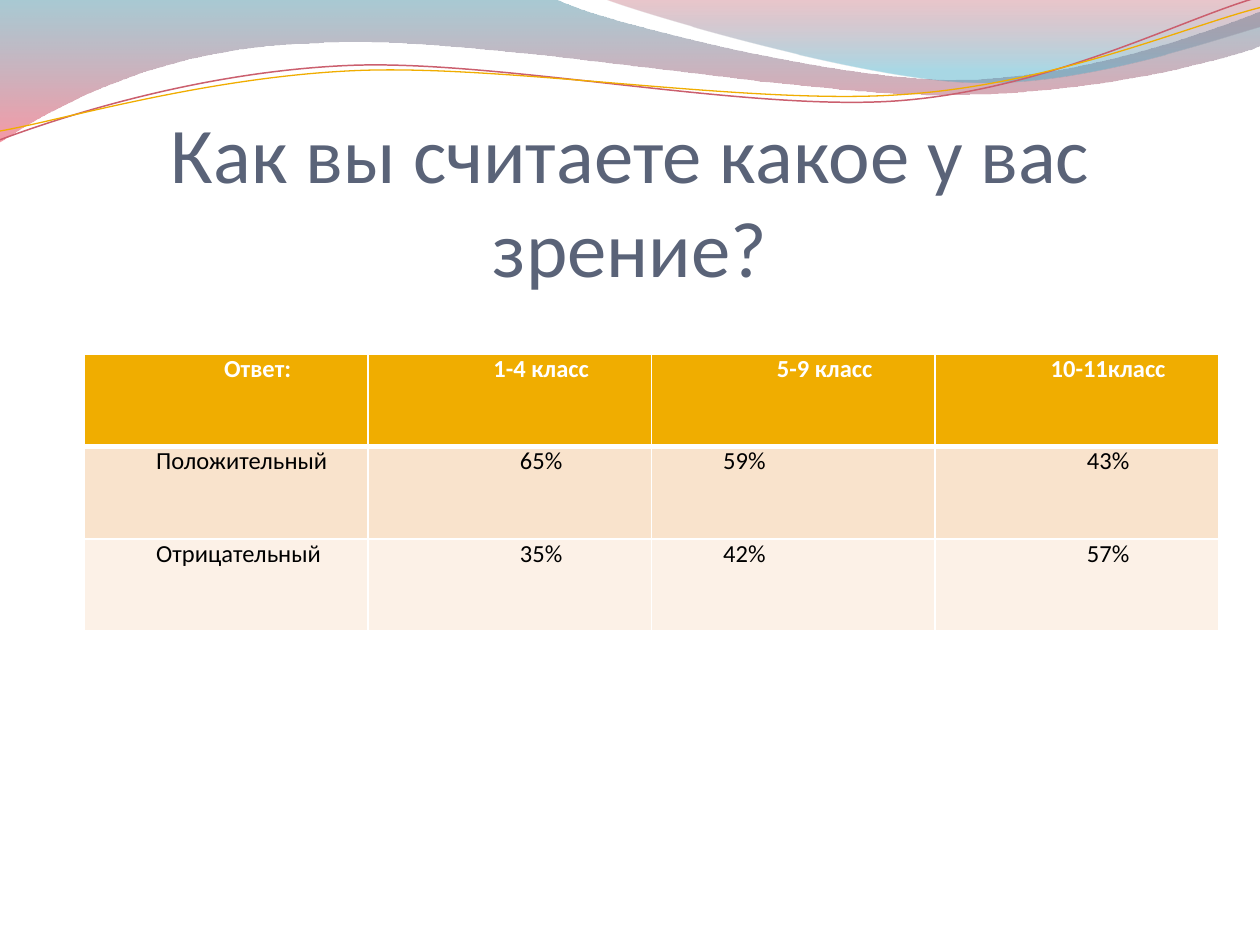
from math import cos, radians, sin

from pptx import Presentation
from pptx.dml.color import RGBColor as RGB
from pptx.enum.text import MSO_ANCHOR as Anchor, MSO_AUTO_SIZE as Auto, PP_ALIGN as Align
from pptx.oxml.ns import qn
from pptx.util import Inches, Pt
from lxml.etree import SubElement as Sub

COLORS = {
    "title": "5A6378", "white": "FFFFFF", "black": "000000",
    "head": "F0AD00", "odd": "F9E3CC", "even": "FCF1E7",
    "teal": "3F8A9F", "red": "EF445B", "wine": "B84253", "sky": "42ABC7",
    "rose": "CB5F6E", "gold": "F0AD00",
}
TILT = 357.3

# Each outline is a start point, then points (2 numbers) or Bezier curves (6 numbers)
LEFT = [(0, 0), (4.4, -0.01),
        (4.76, 0.17, 6.64, 0.63, 7.58, 0.63), (8.53, 0.63, 9.58, 0.26, 10, 0.09),
        (10.01, 0.36),
        (9.83, 0.44, 8.7, 0.76, 7.46, 0.75), (6.22, 0.75, 3.82, 0.28, 2.57, 0.34),
        (1.29, 0.36, 0.46, 0.83, -0.01, 1.13), (0, 0)]
RIGHT = [(4.79, -0.01),
         (5.09, 0.11, 6.82, 0.62, 7.69, 0.65), (8.56, 0.69, 9.61, 0.32, 10, 0.21),
         (10, 0), (4.79, -0.01)]
ROSE = [(0, 1.11),
        (0.48, 0.93, 1.58, 0.57, 2.77, 0.52), (3.95, 0.47, 5.93, 0.89, 7.13, 0.8),
        (8.33, 0.71, 9.38, 0.15, 9.98, -0.02)]
GOLD = [(0, 1.04),
        (0.47, 0.96, 1.64, 0.61, 2.83, 0.56), (4.03, 0.51, 5.97, 0.84, 7.17, 0.75),
        (8.36, 0.67, 9.41, 0.21, 10, 0.06)]

ROWS = [["Ответ:", "1-4 класс", "5-9 класс", "10-11класс"],
        ["Положительный", "65%", "59%", "43%"],
        ["Отрицательный", "35%", "42%", "57%"]]


class Deck:
    font = "Calibri"

    def __init__(self):
        self.prs = Presentation()
        self.prs.slide_width, self.prs.slide_height = Inches(10), Inches(7.5)
        self.slide = self.prs.slides.add_slide(self.prs.slide_layouts[5])

    def color(self, name):
        return RGB.from_string(COLORS[name])

    def style(self, para, size, color, bold=False, align=Align.CENTER):
        para.alignment = align
        for run in para.runs:
            run.font.name, run.font.size, run.font.bold = self.font, Pt(size), bold
            run.font.color.rgb = self.color(color)

    def outline(self, box, parts, turn=0, close=False):
        """Draw Bezier parts in a box; the parts are placed as seen after the turn."""
        x, y, w, h = box
        pen = self.slide.shapes.build_freeform(Inches(x), Inches(y))
        pen.add_line_segments([(Inches(x + w), Inches(y + h))], close=False)
        shape = pen.convert_to_shape()
        shape.shadow.inherit = False
        shape.rotation = turn
        track = next(shape.element.iter(qn("a:path")))
        for node in list(track):
            track.remove(node)
        c, s = cos(radians(turn)), sin(radians(turn))
        for i, part in enumerate(parts):
            tag = "a:moveTo" if i == 0 else "a:lnTo" if len(part) == 2 else "a:cubicBezTo"
            step = Sub(track, qn(tag))
            for px, py in zip(part[::2], part[1::2]):
                dx, dy = px - x - w / 2, py - y - h / 2
                Sub(step, qn("a:pt"), x=str(Inches(w / 2 + dx * c + dy * s)),
                    y=str(Inches(h / 2 - dx * s + dy * c)))
        if close:
            Sub(track, qn("a:close"))
        return shape

    def wave(self, box, parts, stops):
        shape = self.outline(box, parts, close=True)
        shape.line.fill.background()
        fill = shape.fill
        fill.gradient()
        fill.gradient_angle = 270
        for stop, (pos, color, _) in zip(fill.gradient_stops, stops):
            stop.position = pos
            stop.color.rgb = self.color(color)
        for node, (_, _, alpha) in zip(shape.element.iter(qn("a:srgbClr")), stops):
            Sub(node, qn("a:alpha")).set("val", str(alpha * 1000))

    def curve(self, box, parts, color, width):
        shape = self.outline(box, parts, TILT)
        shape.fill.background()
        shape.line.color.rgb = self.color(color)
        shape.line.width = Pt(width)

    def title(self, text, x, y, w, h):
        box = self.slide.shapes.title
        box.left, box.top, box.width, box.height = map(Inches, (x, y, w, h))
        frame = box.text_frame
        frame.text = text
        frame.word_wrap, frame.auto_size = True, Auto.NONE
        frame.vertical_anchor = Anchor.BOTTOM
        frame.margin_left = frame.margin_right = frame.margin_bottom = 0
        frame.margin_top = Inches(0.05)
        self.style(frame.paragraphs[0], 45, "title")
        self.slide.shapes.element.append(box.element)  # in front of the waves

    def border(self, cell):
        props = cell._tc.get_or_add_tcPr()
        for side, width in zip("LRTB", (1, 1, 1, 3)):
            line = Sub(props, qn("a:ln" + side), w=str(Pt(width)))
            Sub(Sub(line, qn("a:solidFill")), qn("a:srgbClr"), val=COLORS["white"])

    def cell(self, cell, text, row, col):
        head = row == 0
        if head:
            self.border(cell)
        cell.fill.solid()
        cell.fill.fore_color.rgb = self.color(("head", "odd", "even")[row])
        cell.margin_left = cell.margin_right = Inches(0.07)
        cell.margin_top = cell.margin_bottom = 0
        cell.text_frame.text = text
        para = cell.text_frame.paragraphs[0]
        align = Align.CENTER if head or col % 2 else Align.LEFT
        self.style(para, 14, "white" if head else "black", head, align)
        props = para._p.get_or_add_pPr()
        props.set("marL", str(Inches(0.5)))
        props.set("indent", "0")

    def table(self, rows, x, y, w, h):
        size = len(rows), len(rows[0])
        grid = self.slide.shapes.add_table(*size, *map(Inches, (x, y, w, h))).table
        for r, row in enumerate(rows):
            for c, text in enumerate(row):
                self.cell(grid.cell(r, c), text, r, c)


def main():
    deck = Deck()
    # Waves along the top
    deck.wave((-0.01, -0.01, 10.02, 1.14), LEFT, [(0, "teal", 45), (1, "red", 55)])
    deck.wave((4.79, -0.01, 5.21, 0.7), RIGHT, [(0, "wine", 30), (0.8, "sky", 45)])
    deck.curve((-0.02, 0.22, 10.02, 0.71), ROSE, "rose", 0.85)
    deck.curve((-0.02, 0.3, 10.03, 0.58), GOLD, "gold", 0.75)
    # Title and answers
    deck.title("Как вы считаете какое у вас зрение?", 0.5, 0.77, 9, 1.56)
    deck.table(ROWS, 0.67, 2.81, 9, 2.2)
    deck.prs.save("out.pptx")


if __name__ == "__main__":
    main()
